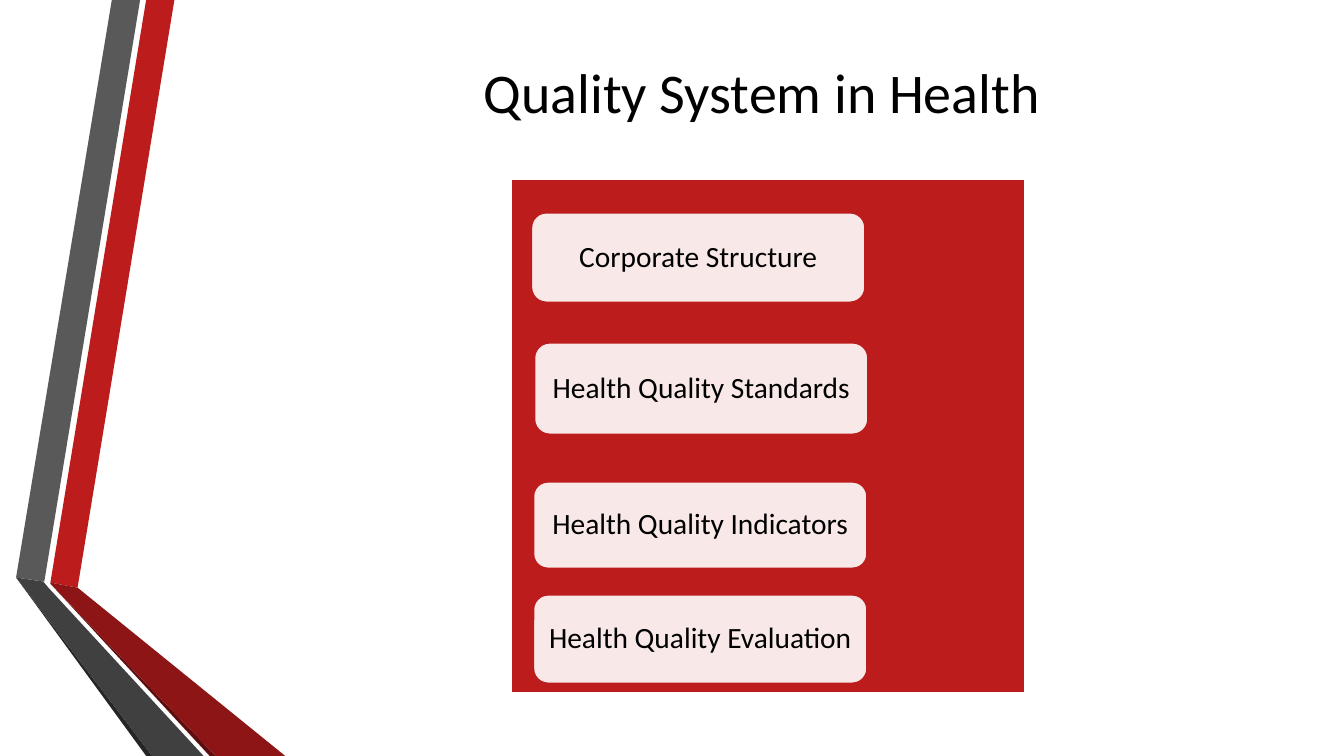
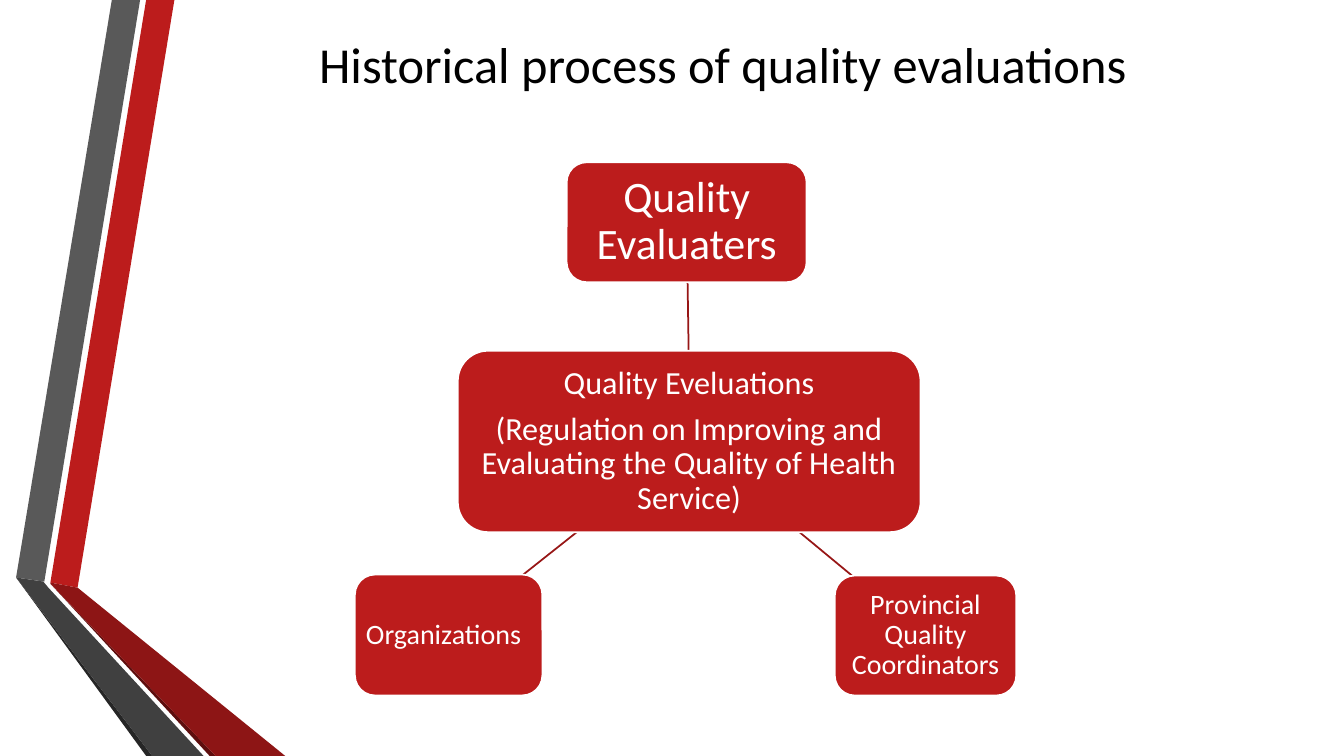
from lxml import etree
from pptx import Presentation
from pptx.dml.color import RGBColor
from pptx.enum.shapes import MSO_CONNECTOR, MSO_SHAPE
from pptx.enum.text import MSO_ANCHOR, MSO_AUTO_SIZE, PP_ALIGN
from pptx.oxml.ns import qn
from pptx.util import Inches, Pt

STRAIGHT = MSO_CONNECTOR.STRAIGHT
ROUNDED = MSO_SHAPE.ROUNDED_RECTANGLE
PROCESS = MSO_SHAPE.FLOWCHART_PROCESS
CENTER = PP_ALIGN.CENTER
MIDDLE, BOTTOM = MSO_ANCHOR.MIDDLE, MSO_ANCHOR.BOTTOM
NO_AUTOFIT = MSO_AUTO_SIZE.NONE

FONT = "Calibri"
RED, DARK_RED = "BC1C1C", "971616"
BLACK, WHITE = "000000", "FFFFFF"
LINE_WIDTH = 1.25
TITLE_ONLY = 5

# Folded ribbon shared by both slides: colour and outline in inches
RIBBON = [
    (RED, [(0.5, 5.78), (0.77, 5.83), (1.73, 0), (1.45, 0)]),
    ("595959", [(1.39, 0), (1.11, 0), (0.16, 5.73), (0.44, 5.77)]),
    ("262626", [(0.16, 5.73), (1.45, 7.5), (1.51, 7.5)]),
    ("5E0E0E", [(0.5, 5.79), (2.08, 7.5), (2.14, 7.5)]),
    ("8D1515", [(0.5, 5.79), (2.14, 7.5), (2.83, 7.5), (0.77, 5.83), (0.5, 5.78)]),
    ("404040", [(2.02, 7.5), (0.48, 5.83), (0.43, 5.77), (0.16, 5.73), (1.51, 7.5)]),
]

# Slide 1: panel and its cards, boxes as left, top, width, height
SYSTEM_TITLE = ("Quality System in Health", (2.67, 0, 9.77, 1.29), 40)
PANEL = (5.07, 1.78, 5.09, 5.09)
CARD_WIDTH = 3.31
CARDS = [  # text, left, top, height
    ("Corporate Structure", 5.27, 2.11, 0.89),
    ("Health Quality Standards", 5.3, 3.4, 0.91),
    ("Health Quality Indicators", 5.29, 4.78, 0.86),
    ("Health Quality Evaluation", 5.29, 5.9, 0.88),
]

# Slide 2: hierarchy of evaluation
HISTORY_TITLE = ("Historical process of quality evaluations", (1.76, 0.23, 10.82, 0.75), 36)
NODES = [  # paragraphs, box, size, inset, extra right inset
    (["Quality Evaluaters"], (5.62, 1.61, 2.38, 1.19), 31, 0.09, 0),
    (["Quality Eveluations",
      "(Regulation on Improving and Evaluating the Quality of Health Service)"],
     (4.54, 3.48, 4.59, 1.8), 23, 0.06, 0),
    (["Organizations"], (3.52, 5.7, 1.86, 1.2), 20, 0.02, 0.1),
    (["Provincial Quality Coordinators"], (8.28, 5.71, 1.8, 1.19), 20, 0.06, 0),
]
LINKS = [
    ((6.82, 2.8), (6.83, 3.48)),
    ((5.72, 5.28), (5.19, 5.7)),
    ((7.93, 5.28), (8.45, 5.71)),
]


def color(hex_string):
    return RGBColor.from_string(hex_string)


def inches(values):
    return [Inches(value) for value in values]


def write(frame, paragraphs, size, text_color, anchor=MIDDLE, inset=0.09,
          extra_right=0, line_spacing=0.9):
    frame.word_wrap = True
    frame.auto_size = NO_AUTOFIT
    frame.vertical_anchor = anchor
    frame.margin_left = frame.margin_top = frame.margin_bottom = Inches(inset)
    frame.margin_right = Inches(inset + extra_right)
    for index, text in enumerate(paragraphs):
        paragraph = frame.add_paragraph() if index else frame.paragraphs[0]
        paragraph.alignment = CENTER
        paragraph.line_spacing = line_spacing
        paragraph.space_after = Pt(0.35 * size)
        run = paragraph.add_run()
        run.text = text
        run.font.name = FONT
        run.font.size = Pt(size)
        run.font.color.rgb = color(text_color)


def add_box(slide, kind, box, fill, line, opacity=100):
    shape = slide.shapes.add_shape(kind, *inches(box))
    shape.shadow.inherit = False
    shape.fill.solid()
    shape.fill.fore_color.rgb = color(fill)
    shape.line.color.rgb = color(line)
    shape.line.width = Pt(LINE_WIDTH)
    if opacity < 100:
        fill_color = shape.element.spPr.find(qn("a:solidFill"))[0]
        etree.SubElement(fill_color, qn("a:alpha"), val=str(opacity * 1000))
    return shape


def add_link(slide, start, end):
    connector = slide.shapes.add_connector(STRAIGHT, *inches(start + end))
    connector.line.color.rgb = color(DARK_RED)
    connector.line.width = Pt(LINE_WIDTH)
    etree.SubElement(connector.element.spPr, qn("a:effectLst"))


def add_ribbon(slide):
    """Draw the ribbon and move it to the slide's layout."""
    layout_tree = slide.slide_layout.shapes.element
    for fill, points in RIBBON:
        start, *others = [tuple(inches(point)) for point in points]
        builder = slide.shapes.build_freeform(*start)
        builder.add_line_segments(others, close=True)
        shape = builder.convert_to_shape()
        shape.shadow.inherit = False
        shape.fill.solid()
        shape.fill.fore_color.rgb = color(fill)
        shape.line.fill.background()
        layout_tree.append(shape.element)


def add_slide(presentation, text, box, size):
    slide = presentation.slides.add_slide(presentation.slide_layouts[TITLE_ONLY])
    title = slide.shapes.title
    title.left, title.top, title.width, title.height = inches(box)
    write(title.text_frame, [text], size, BLACK, anchor=BOTTOM, inset=0.05, line_spacing=1)
    return slide


def main():
    presentation = Presentation()
    presentation.slide_width = Inches(13.33)
    presentation.slide_height = Inches(7.5)

    # Quality system
    slide = add_slide(presentation, *SYSTEM_TITLE)
    add_ribbon(slide)
    add_box(slide, PROCESS, PANEL, RED, WHITE)
    for text, left, top, height in CARDS:
        card = add_box(slide, ROUNDED, (left, top, CARD_WIDTH, height), WHITE, RED, opacity=90)
        write(card.text_frame, [text], 21, BLACK)

    # Historical process
    slide = add_slide(presentation, *HISTORY_TITLE)
    for start, end in LINKS:
        add_link(slide, start, end)
    for paragraphs, box, size, inset, extra_right in NODES:
        node = add_box(slide, ROUNDED, box, RED, WHITE)
        write(node.text_frame, paragraphs, size, WHITE, inset=inset, extra_right=extra_right)

    presentation.save("out.pptx")


if __name__ == "__main__":
    main()
